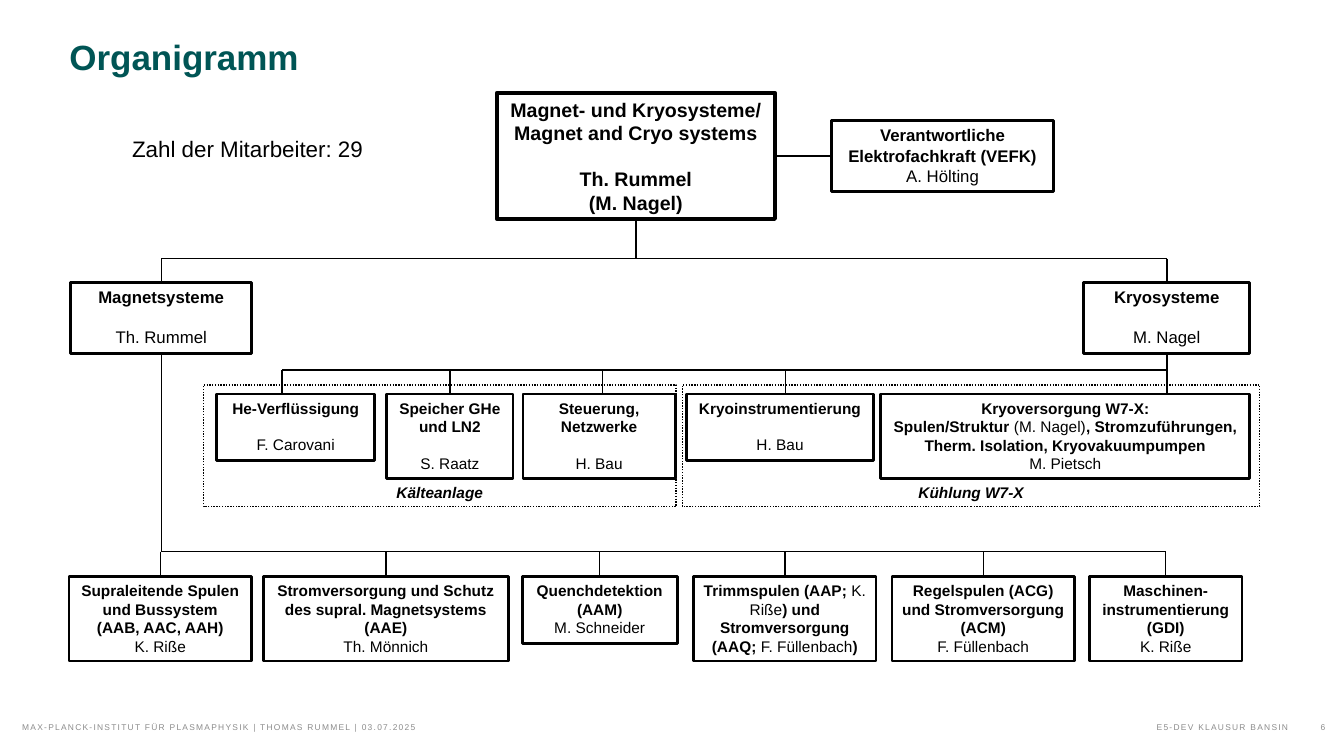
from dataclasses import dataclass

from lxml import etree
from pptx import Presentation
from pptx.dml.color import RGBColor
from pptx.enum.dml import MSO_LINE
from pptx.enum.shapes import MSO_CONNECTOR, MSO_SHAPE
from pptx.enum.text import MSO_ANCHOR, PP_ALIGN
from pptx.oxml.ns import qn
from pptx.util import Cm, Pt

RECT = MSO_SHAPE.RECTANGLE
STRAIGHT = MSO_CONNECTOR.STRAIGHT
DOTTED = MSO_LINE.ROUND_DOT
TOP, BOTTOM = MSO_ANCHOR.TOP, MSO_ANCHOR.BOTTOM
LEFT, CENTER, RIGHT = PP_ALIGN.LEFT, PP_ALIGN.CENTER, PP_ALIGN.RIGHT
SIDE_TOP, SIDE_LEFT, SIDE_BOTTOM, SIDE_RIGHT = range(4)


@dataclass(frozen=True)
class Theme:
    font: str = "Arial"
    title: RGBColor = RGBColor(0x00, 0x55, 0x55)
    ink: RGBColor = RGBColor(0x00, 0x00, 0x00)
    muted: RGBColor = RGBColor(0x8C, 0x8C, 0x8C)
    title_size: float = 25
    note_size: float = 16
    head_size: float = 14
    area_size: float = 12
    group_size: float = 11
    footer_size: float = 6
    head_line: float = 2.75
    box_line: float = 2
    thin_line: float = 1
    blank_line: float = 1.15


THEME = Theme()


def style_run(r, size, color, bold=False, italic=False):
    r.font.name = THEME.font
    r.font.size = Pt(size)
    r.font.bold = bold
    r.font.italic = italic
    r.font.color.rgb = color


def add_label(slide, box, text, size, color, align=LEFT, bold=False, leading=None, anchor=TOP):
    sp = slide.shapes.add_textbox(*map(Cm, box))
    tf = sp.text_frame
    tf.word_wrap = True
    tf.vertical_anchor = anchor
    tf.margin_left = tf.margin_right = tf.margin_top = tf.margin_bottom = 0
    p = tf.paragraphs[0]
    p.text = text
    p.alignment = align
    if leading:
        p.line_spacing = Pt(leading)
    style_run(p.runs[0], size, color, bold)
    return p.runs[0]


def add_outline(slide, box, width):
    sp = slide.shapes.add_shape(RECT, *map(Cm, box))
    sp.shadow.inherit = False
    sp.fill.background()
    sp.line.color.rgb = THEME.ink
    sp.line.width = Pt(width)
    sp.text_frame.word_wrap = True
    sp.text_frame.vertical_anchor = TOP
    return sp


def add_unit(slide, box, lines, size, gap_at=None, width=THEME.box_line):
    """Text between asterisks is set in regular weight."""
    sp = add_outline(slide, box, width)
    tf = sp.text_frame
    for i, line in enumerate(lines):
        p = tf.add_paragraph() if i else tf.paragraphs[0]
        p.alignment = CENTER
        if i == gap_at:
            p.space_before = Pt(round(size * THEME.blank_line, 1))
        for j, part in enumerate(line.split("*")):
            if part:
                r = p.add_run()
                r.text = part
                style_run(r, size, THEME.ink, bold=j % 2 == 0)
    return sp


def add_line(slide, x1, y1, x2, y2, start=None, end=None):
    line = slide.shapes.add_connector(STRAIGHT, x1, y1, x2, y2)
    line.line.color.rgb = THEME.ink
    line.line.width = Pt(THEME.thin_line)
    etree.SubElement(line._element.spPr, qn("a:effectLst"))
    if start:
        line.begin_connect(*start)
    if end:
        line.end_connect(*end)


def middle(sp):
    return sp.left + sp.width // 2


def drop_to(slide, bus_y, sp, x=None):
    end = (sp, SIDE_TOP) if x is None else None
    x = middle(sp) if x is None else x
    add_line(slide, x, bus_y, x, sp.top, end=end)


def hang_from(slide, sp, bottom):
    add_line(slide, middle(sp), sp.top + sp.height, middle(sp), bottom, start=(sp, SIDE_BOTTOM))


def header(slide, x, y, w):
    add_label(slide, (x, y, w, 1.07), "Organigramm", THEME.title_size, THEME.title, bold=True, leading=28)
    add_label(slide, (x + 1.58, y + 2.31, 6.43, 0.74), "Zahl der Mitarbeiter: 29",
              THEME.note_size, THEME.ink, leading=23)


def leadership(slide, x, y):
    head = add_unit(slide, (x + 10.74, y, 7.01, 3.18),
                    ["Magnet- und Kryosysteme/", "Magnet and Cryo systems", "Th. Rummel", "(M. Nagel)"],
                    THEME.head_size, gap_at=2, width=THEME.head_line)
    vefk = add_unit(slide, (x + 19.18, y + 0.69, 5.59, 1.8),
                    ["Verantwortliche Elektrofachkraft (VEFK)", "*A. Hölting*"], THEME.area_size)
    magnet = add_unit(slide, (x, y + 4.77, 4.57, 1.8), ["Magnetsysteme", "*Th. Rummel*"],
                      THEME.area_size, gap_at=1)
    cryo = add_unit(slide, (x + 25.53, y + 4.77, 4.19, 1.8), ["Kryosysteme", "*M. Nagel*"],
                    THEME.area_size, gap_at=1)
    bus_y = Cm(y + 4.18)
    add_line(slide, head.left + head.width, middle(head), vefk.left, vefk.top,
             start=(head, SIDE_RIGHT), end=(vefk, SIDE_LEFT))
    hang_from(slide, head, bus_y)
    add_line(slide, middle(magnet), bus_y, middle(cryo), bus_y)
    for area in (magnet, cryo):
        drop_to(slide, bus_y, area)
    return magnet, cryo


def cryo_groups(slide, x, y, cryo):
    for dx, w, name in [(0, 11.91, "Kälteanlage"), (12.07, 14.55, "Kühlung W7-X")]:
        frame = add_outline(slide, (x + dx, y + 0.38, w, 3.07), THEME.thin_line)
        frame.line.dash_style = DOTTED
        tf = frame.text_frame
        tf.vertical_anchor = BOTTOM
        p = tf.paragraphs[0]
        p.text = name
        p.alignment = CENTER
        style_run(p.runs[0], THEME.group_size, THEME.ink, bold=True, italic=True)

    units = [
        (0.33, 3.99, 1.68, ["He-Verflüssigung", "*F. Carovani*"], 1, 1.98),
        (4.62, 3.18, 2.13, ["Speicher GHe und LN2", "*S. Raatz*"], 1, None),
        (8.05, 3.84, 2.13, ["Steuerung, Netzwerke", "*H. Bau*"], 1, 10.06),
        (12.17, 4.72, 1.68, ["Kryoinstrumentierung", "*H. Bau*"], 1, 14.66),
        (17.07, 9.3, 2.13,
         ["Kryoversorgung W7-X:",
          "Spulen/Struktur *(M. Nagel)*, Stromzuführungen, Therm. Isolation, Kryovakuumpumpen",
          "*M. Pietsch*"], None, None),
    ]
    bus_y = Cm(y)
    for dx, w, h, lines, gap_at, drop_dx in units:
        sp = add_unit(slide, (x + dx, y + 0.61, w, h), lines, THEME.group_size, gap_at)
        if lines is not units[-1][3]:
            drop_to(slide, bus_y, sp, None if drop_dx is None else Cm(x + drop_dx))
    hang_from(slide, cryo, sp.top)
    add_line(slide, Cm(x + units[0][-1]), bus_y, middle(cryo), bus_y)


def magnet_groups(slide, x, y, magnet):
    units = [
        (0, 4.6, 2.13, ["Supraleitende Spulen und Bussystem", "(AAB, AAC, AAH)", "*K. Riße*"]),
        (4.9, 6.17, 2.13, ["Stromversorgung und Schutz des supral. Magnetsystems", "(AAE)", "*Th. Mönnich*"]),
        (11.42, 3.91, 1.68, ["Quenchdetektion", "(AAM)", "*M. Schneider*"]),
        (15.74, 4.6, 2.13, ["Trimmspulen (AAP; *K. Riße*) und Stromversorgung", "(AAQ; *F. Füllenbach*)"]),
        (20.74, 4.6, 2.13, ["Regelspulen (ACG) und Stromversorgung (ACM)", "*F. Füllenbach*"]),
        (25.72, 3.84, 2.13, ["Maschinen-instrumentierung", "(GDI)", "*K. Riße*"]),
    ]
    bus_y = Cm(y)
    for dx, w, h, lines in units:
        sp = add_unit(slide, (x + dx, y + 0.63, w, h), lines, THEME.group_size)
        drop_to(slide, bus_y, sp)
    hang_from(slide, magnet, bus_y)
    add_line(slide, middle(magnet), bus_y, middle(sp), bus_y)


def footer(slide, x, y):
    for dx, w, text, align in [
        (0, 18.29, "MAX-PLANCK-INSTITUT FÜR PLASMAPHYSIK | THOMAS RUMMEL | 03.07.2025", LEFT),
        (18.5, 13.4, "E5-DEV KLAUSUR BANSIN", RIGHT),
        (31.9, 0.94, "6", RIGHT),
    ]:
        r = add_label(slide, (x + dx, y, w, 0.41), text, THEME.footer_size, THEME.muted, align, anchor=BOTTOM)
        r.font._element.set("spc", "90")


def main():
    prs = Presentation()
    prs.slide_width, prs.slide_height = Cm(33.87), Cm(19.05)
    slide = prs.slides.add_slide(prs.slide_layouts[6])
    header(slide, 1.75, 0.97, 26.77)
    magnet, cryo = leadership(slide, 1.78, 2.34)
    cryo_groups(slide, 5.13, 9.32, cryo)
    magnet_groups(slide, 1.74, 13.9, magnet)
    footer(slide, 0.56, 18.03)
    prs.save("out.pptx")


if __name__ == "__main__":
    main()
